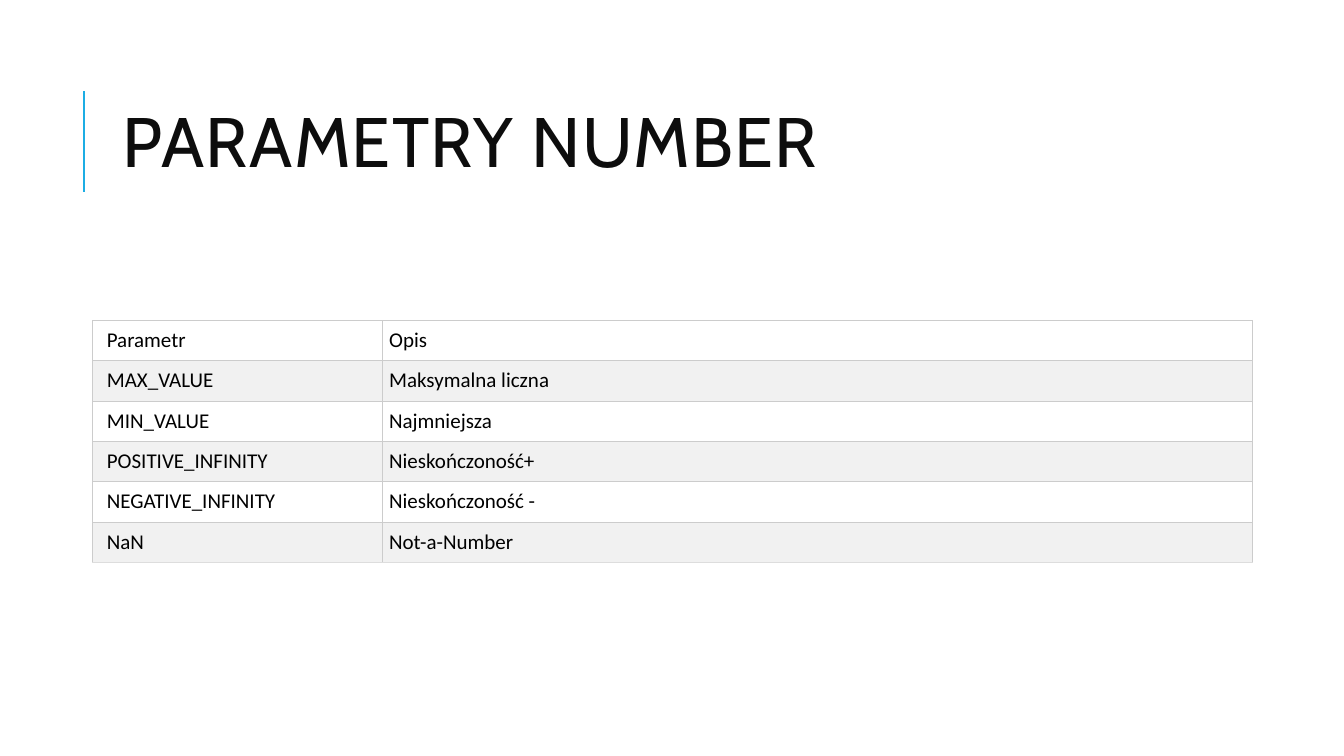
from lxml.etree import SubElement
from pptx import Presentation
from pptx.dml.color import RGBColor
from pptx.enum.shapes import MSO_CONNECTOR
from pptx.enum.text import MSO_ANCHOR
from pptx.oxml.ns import qn
from pptx.util import Inches, Pt

COLORS = {
    "accent": "1CADE4",
    "title": "0D0D0D",
    "text": "000000",
    "row": "FFFFFF",
    "band": "F1F1F1",
    "border": "CCCCCC",
    "bottom": "DDDDDD",
}
PARAMETERS = [
    ("Parametr", "Opis"),
    ("MAX_VALUE", "Maksymalna liczna"),
    ("MIN_VALUE", "Najmniejsza"),
    ("POSITIVE_INFINITY", "Nieskończoność+"),
    ("NEGATIVE_INFINITY", "Nieskończoność -"),
    ("NaN", "Not-a-Number"),
]
COLUMN_WIDTHS = (2.87, 8.63)
ROW_HEIGHT = 0.4


def set_attributes(target, values):
    for name, value in values.items():
        setattr(target, name, value)


class SlideBuilder:
    title_font = {"name": "Cabin", "size": Pt(50)}
    table_font = {"name": "Calibri", "size": Pt(15)}
    cell_margins = {
        "margin_left": Inches(0.07),
        "margin_right": Inches(0.07),
        "margin_top": Inches(0.07),
        "margin_bottom": Inches(0.07),
    }

    def __init__(self, slide):
        self.slide = slide

    def color(self, name):
        return RGBColor.from_string(COLORS[name])

    def add_text(self, paragraph, text, font, color):
        run = paragraph.add_run()
        run.text = text
        set_attributes(run.font, font)
        run.font.color.rgb = self.color(color)
        return run

    def add_title(self, text, left, top, width, height):
        box = self.slide.shapes.add_textbox(
            Inches(left), Inches(top), Inches(width), Inches(height)
        )
        set_attributes(
            box.text_frame,
            {"word_wrap": True, "vertical_anchor": MSO_ANCHOR.MIDDLE},
        )
        paragraph = box.text_frame.paragraphs[0]
        paragraph.line_spacing = 0.8
        run = self.add_text(paragraph, text, self.title_font, "title")
        run._r.get_or_add_rPr().set("spc", "100")

    def add_line(self, start, end, width):
        points = [Inches(value) for value in (*start, *end)]
        line = self.slide.shapes.add_connector(MSO_CONNECTOR.STRAIGHT, *points)
        line.line.color.rgb = self.color("accent")
        line.line.width = Pt(width)
        SubElement(line._element.spPr, qn("a:effectLst"))

    def add_borders(self, cell, bottom):
        """Draw all four borders; they must precede the fill in the XML."""
        properties = cell._tc.get_or_add_tcPr()
        sides = {"lnL": "border", "lnR": "border", "lnT": "border", "lnB": bottom}
        for side, color in sides.items():
            border = SubElement(properties, qn(f"a:{side}"), w=str(Pt(0.75)))
            fill = SubElement(border, qn("a:solidFill"))
            SubElement(fill, qn("a:srgbClr"), val=COLORS[color])

    def add_table(self, rows, left, top):
        frame = self.slide.shapes.add_table(
            len(rows), len(COLUMN_WIDTHS), Inches(left), Inches(top),
            Inches(sum(COLUMN_WIDTHS)), Inches(ROW_HEIGHT * len(rows)),
        )
        table = frame.table
        set_attributes(table, {"first_row": False, "horz_banding": False})
        for column, width in zip(table.columns, COLUMN_WIDTHS):
            column.width = Inches(width)
        for row_index, texts in enumerate(rows):
            table.rows[row_index].height = Inches(ROW_HEIGHT)
            for column_index, text in enumerate(texts):
                cell = table.cell(row_index, column_index)
                set_attributes(cell, self.cell_margins)
                if column_index == 0:
                    cell.margin_left = Inches(0.14)
                is_last = row_index == len(rows) - 1
                self.add_borders(cell, "bottom" if is_last else "border")
                cell.fill.solid()
                cell.fill.fore_color.rgb = self.color("band" if row_index % 2 else "row")
                paragraph = cell.text_frame.paragraphs[0]
                self.add_text(paragraph, text, self.table_font, "text")


def main():
    presentation = Presentation()
    set_attributes(
        presentation, {"slide_width": Inches(13.33), "slide_height": Inches(7.5)}
    )
    builder = SlideBuilder(presentation.slides.add_slide(presentation.slide_layouts[6]))
    builder.add_line((0.83, 1.9), (0.83, 0.9), 1.5)
    builder.add_title("PARAMETRY NUMBER", 1.12, 0.64, 10.63, 1.64)
    builder.add_table(PARAMETERS, 0.92, 3.18)
    presentation.save("out.pptx")


if __name__ == "__main__":
    main()
